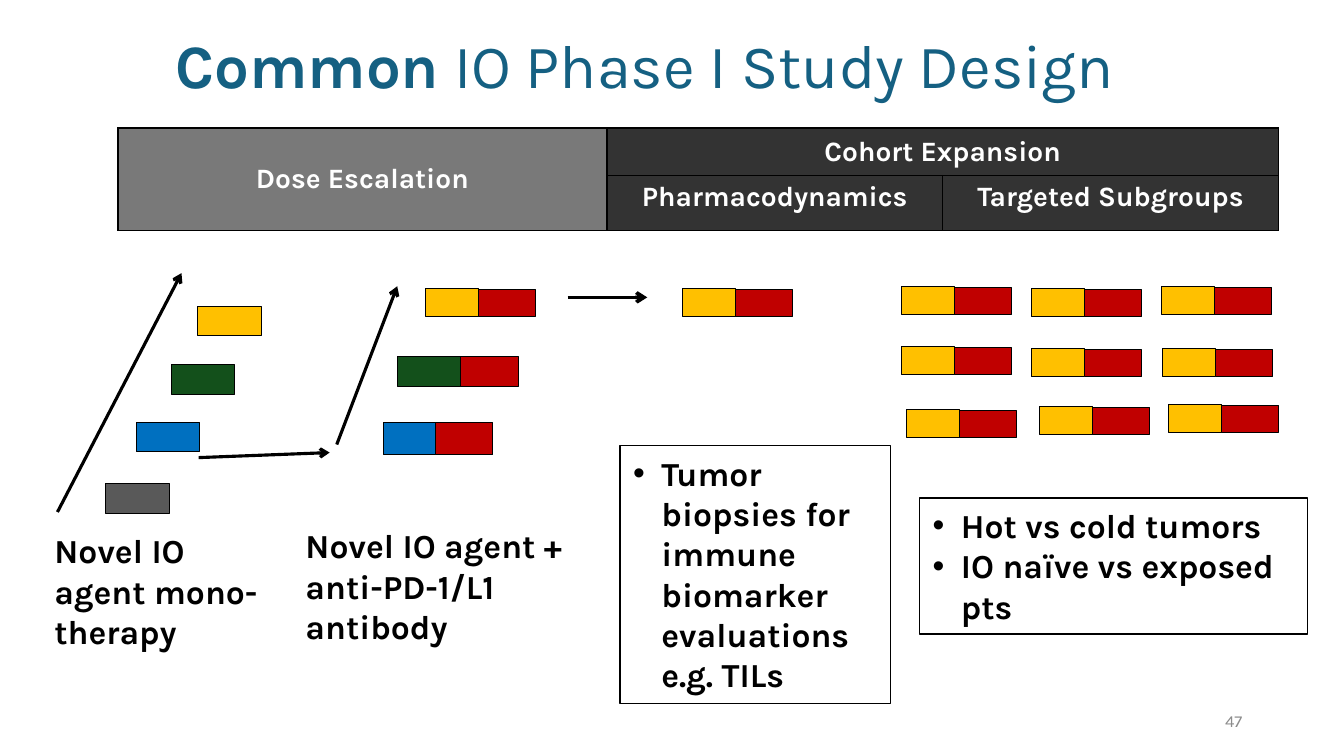
from dataclasses import dataclass

import pptx
import pptx.dml.color
import pptx.enum.shapes
import pptx.enum.text
import pptx.oxml
import pptx.oxml.ns
import pptx.util
from pptx.util import Inches

ALIGN = pptx.enum.text.PP_ALIGN
ANCHOR = pptx.enum.text.MSO_ANCHOR
RECTANGLE = pptx.enum.shapes.MSO_SHAPE.RECTANGLE
NAMESPACE = pptx.oxml.ns.nsdecls("a")


@dataclass(frozen=True)
class Theme:
    """Colours, font and type sizes of the slide."""
    font: str = "Karla"
    title: str = "156082"
    ink: str = "000000"
    light: str = "FFFFFF"
    muted: str = "8C8C8C"
    escalation: str = "797979"
    expansion: str = "333333"
    yellow: str = "FFC000"
    red: str = "C00000"
    green: str = "13501B"
    blue: str = "0070C0"
    grey: str = "595959"
    title_size: int = 44
    body_size: int = 24
    header_size: int = 20
    number_size: int = 12


class StudyPage:
    """Draws styled elements on the current slide."""

    def __init__(self, page, theme):
        self.page = page
        self.theme = theme

    def colour(self, value):
        return pptx.dml.color.RGBColor.from_string(value)

    def style(self, para, size, colour, bold=True):
        for span in para.runs:
            span.font.name = self.theme.font
            span.font.size = pptx.util.Pt(size)
            span.font.bold = bold
            span.font.color.rgb = self.colour(colour)

    def outline(self, line, width):
        line.color.rgb = self.colour(self.theme.ink)
        line.width = pptx.util.Pt(width)

    def text_box(self, left, top, width, height):
        box = self.page.shapes.add_textbox(Inches(left), Inches(top), Inches(width), Inches(height))
        box.text_frame.word_wrap = True
        return box

    def title(self, strong, rest):
        frame = self.text_box(1.64, 0.25, 10.05, 0.87).text_frame
        frame.vertical_anchor = ANCHOR.MIDDLE
        para = frame.paragraphs[0]
        para.line_spacing = 0.9
        for words in (strong, rest):
            para.add_run().text = words
        self.style(para, self.theme.title_size, self.theme.title, False)
        para.runs[0].font.bold = True

    def page_number(self, number):
        frame = self.text_box(9.42, 6.95, 3, 0.4).text_frame
        frame.text = number
        frame.vertical_anchor = ANCHOR.MIDDLE
        para = frame.paragraphs[0]
        para.alignment = ALIGN.RIGHT
        self.style(para, self.theme.number_size, self.theme.muted, False)

    def note(self, left, top, width, height, lines, boxed=False):
        box = self.text_box(left, top, width, height)
        frame = box.text_frame
        frame.margin_left = frame.margin_right = Inches(0.13)
        frame.margin_top = frame.margin_bottom = Inches(0.07)
        frame.auto_size = pptx.enum.text.MSO_AUTO_SIZE.SHAPE_TO_FIT_TEXT
        frame.text = "\n".join(lines)
        if boxed:
            self.outline(box.line, 1)
        for para in frame.paragraphs:
            self.style(para, self.theme.body_size, self.theme.ink)
            if boxed:
                self.bullet(para)

    def bullet(self, para):
        properties = para._p.get_or_add_pPr()
        properties.set("marL", str(Inches(0.28)))
        properties.set("indent", str(-Inches(0.28)))
        for markup in ('<a:buFont {} typeface="Arial"/>', '<a:buChar {} char="•"/>'):
            properties.append(pptx.oxml.parse_xml(markup.format(NAMESPACE)))

    def block(self, left, top, width, height, fill, shapes=None):
        shapes = self.page.shapes if shapes is None else shapes
        box = shapes.add_shape(RECTANGLE, Inches(left), Inches(top), Inches(width), Inches(height))
        box.shadow.inherit = False
        box.fill.solid()
        box.fill.fore_color.rgb = self.colour(fill)
        self.outline(box.line, 0.75)

    def combination(self, left, top):
        group = self.page.shapes.add_group_shape()
        self.block(left + 0.52, top + 0.01, 0.57, 0.27, self.theme.red, group.shapes)
        self.block(left, top, 0.53, 0.28, self.theme.yellow, group.shapes)

    def arrow(self, start, end, width=2.25):
        line = self.page.shapes.add_connector(
            pptx.enum.shapes.MSO_CONNECTOR.STRAIGHT, *map(Inches, start + end))
        self.outline(line.line, width)
        line.line._get_or_add_ln().append(pptx.oxml.parse_xml(f'<a:tailEnd {NAMESPACE} type="arrow"/>'))
        line._element.spPr.append(pptx.oxml.parse_xml(f"<a:effectLst {NAMESPACE}/>"))

    def cell_borders(self, cell):
        properties = cell._tc.get_or_add_tcPr()
        for index, side in enumerate("LRTB"):
            properties.insert(index, pptx.oxml.parse_xml(
                f'<a:ln{side} {NAMESPACE} w="{pptx.util.Pt(1)}"><a:solidFill>'
                f'<a:srgbClr val="{self.theme.ink}"/></a:solidFill></a:ln{side}>'))

    def phase_table(self, rows, widths, heights):
        table = self.page.shapes.add_table(
            len(rows), len(widths), Inches(1.17), Inches(1.27),
            Inches(sum(widths)), Inches(sum(heights))).table
        for column, width in zip(table.columns, widths):
            column.width = Inches(width)
        for row, height in zip(table.rows, heights):
            row.height = Inches(height)
        table.cell(0, 0).merge(table.cell(1, 0))
        table.cell(0, 1).merge(table.cell(0, 2))
        for row_index, row in enumerate(rows):
            for column_index, words in enumerate(row):
                cell = table.cell(row_index, column_index)
                cell.fill.solid()
                cell.fill.fore_color.rgb = self.colour(
                    self.theme.expansion if column_index else self.theme.escalation)
                self.cell_borders(cell)
                if words:
                    cell.text = words
                    cell.vertical_anchor = ANCHOR.TOP if row_index else ANCHOR.MIDDLE
                    para = cell.text_frame.paragraphs[0]
                    para.alignment = ALIGN.CENTER
                    self.style(para, self.theme.header_size, self.theme.light)


def main():
    deck = pptx.Presentation()
    deck.slide_width, deck.slide_height = Inches(13.33), Inches(7.5)
    theme = Theme()
    study = StudyPage(deck.slides.add_slide(deck.slide_layouts[6]), theme)

    study.title("Common", " IO Phase I Study Design")
    study.phase_table(
        [("Dose Escalation", "Cohort Expansion", ""),
         ("", "Pharmacodynamics", "Targeted Subgroups")],
        (4.85, 3.33, 3.33), (0.47, 0.55))

    study.note(6.15, 4.42, 2.68, 2.56,
               ["Tumor biopsies for immune biomarker evaluations e.g. TILs"], boxed=True)
    study.note(9.12, 4.94, 3.85, 1.35,
               ["Hot vs cold tumors", "IO naïve vs exposed pts"], boxed=True)
    study.note(0.41, 5.19, 2.46, 1.35, ["Novel IO agent mono-therapy"])
    study.note(2.9, 5.14, 2.86, 1.35, ["Novel IO agent + anti-PD-1/L1 antibody"])

    for left, top, fill in ((1.96, 3.04, theme.yellow), (1.7, 3.62, theme.green),
                            (1.35, 4.19, theme.blue), (1.05, 4.8, theme.grey)):
        study.block(left, top, 0.63, 0.29, fill)
    for left, top, width, height, fill in ((3.94, 3.54, 0.63, 0.29, theme.green),
                                           (3.8, 4.19, 0.52, 0.32, theme.blue)):
        study.block(left + width, top, 0.57, height, theme.red)
        study.block(left, top, width, height, fill)

    escalated, expanded = (4.22, 2.86), (6.77, 2.86)
    subgroups = ((8.94, 2.84), (8.94, 3.44), (8.99, 4.06),
                 (10.23, 2.86), (10.23, 3.46), (10.31, 4.03),
                 (11.52, 2.84), (11.53, 3.46), (11.59, 4.01))
    for left, top in (escalated, expanded, *subgroups):
        study.combination(left, top)

    study.arrow((0.57, 5.08), (1.8, 2.71))
    study.arrow((1.97, 4.54), (3.27, 4.49))
    study.arrow((3.34, 4.41), (3.94, 2.84))
    study.arrow((5.63, 2.95), (6.42, 2.95), 2.5)
    study.page_number("47")
    deck.save("out.pptx")


if __name__ == "__main__":
    main()
